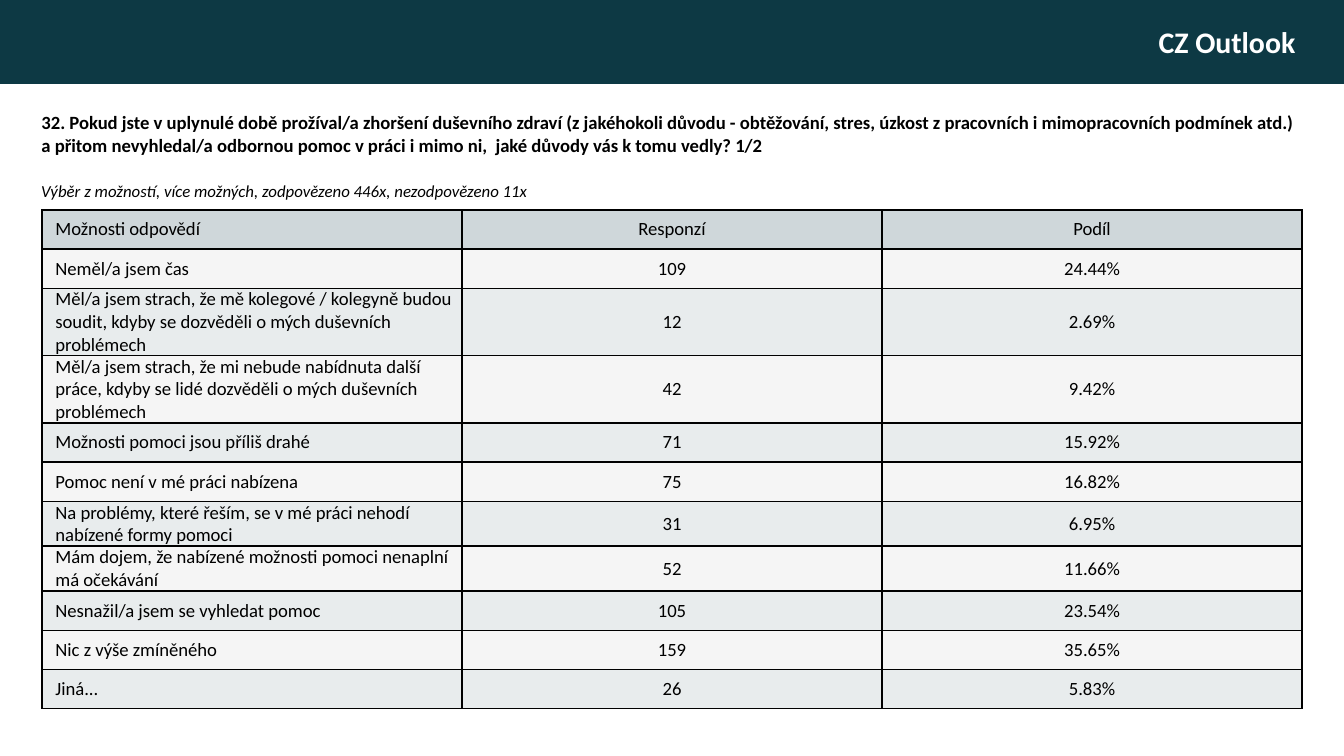
from dataclasses import dataclass

import pptx
import pptx.dml.color
import pptx.enum.shapes
import pptx.enum.text
import pptx.oxml.ns
import pptx.slide
import pptx.util
from lxml import etree

Pt = pptx.util.Pt
ALIGN = pptx.enum.text.PP_ALIGN
ANCHOR = pptx.enum.text.MSO_ANCHOR

COLORS = {
    "band": "0D3944",
    "header": "CFD7DA",
    "odd": "F5F5F5",
    "even": "E8ECED",
    "text": "000000",
    "white": "FFFFFF",
}

BRAND = "CZ Outlook"
QUESTION = (
    "32. Pokud jste v uplynulé době prožíval/a zhoršení duševního zdraví "
    "(z jakéhokoli důvodu - obtěžování, stres, úzkost z pracovních i "
    "mimopracovních podmínek atd.) a přitom nevyhledal/a odbornou pomoc v práci "
    "i mimo ni,  jaké důvody vás k tomu vedly? 1/2"
)
NOTE = "Výběr z možností, více možných, zodpovězeno 446x, nezodpovězeno 11x"
ANSWERS = [
    ("Možnosti odpovědí", "Responzí", "Podíl"),
    ("Neměl/a jsem čas", "109", "24.44%"),
    ("Měl/a jsem strach, že mě kolegové / kolegyně budou soudit, kdyby se "
     "dozvěděli o mých duševních problémech", "12", "2.69%"),
    ("Měl/a jsem strach, že mi nebude nabídnuta další práce, kdyby se lidé "
     "dozvěděli o mých duševních problémech", "42", "9.42%"),
    ("Možnosti pomoci jsou příliš drahé", "71", "15.92%"),
    ("Pomoc není v mé práci nabízena", "75", "16.82%"),
    ("Na problémy, které řeším, se v mé práci nehodí nabízené formy pomoci",
     "31", "6.95%"),
    ("Mám dojem, že nabízené možnosti pomoci nenaplní má očekávání",
     "52", "11.66%"),
    ("Nesnažil/a jsem se vyhledat pomoc", "105", "23.54%"),
    ("Nic z výše zmíněného", "159", "35.65%"),
    ("Jiná...", "26", "5.83%"),
]


def rgb(name):
    return pptx.dml.color.RGBColor.from_string(COLORS[name])


def apply(target, values):
    for name, value in values.items():
        setattr(target, name, value)


def paint(target, color):
    target.fill.solid()
    target.fill.fore_color.rgb = rgb(color)


@dataclass
class SurveyPage:
    page: pptx.slide.Slide
    font: str = "Calibri"
    border: float = 1

    def add_text(self, frame, text, size, color="text", align=ALIGN.LEFT, **font):
        para = frame.paragraphs[0]
        para.alignment = align
        span = para.add_run()
        span.text = text
        apply(span.font, {"name": self.font, "size": Pt(size), **font})
        span.font.color.rgb = rgb(color)
        return para

    def band(self, text, width, height):
        box = self.page.shapes.add_shape(
            pptx.enum.shapes.MSO_SHAPE.RECTANGLE, 0, 0, Pt(width), Pt(height))
        box.shadow.inherit = False
        paint(box, "band")
        box.line.fill.background()
        apply(box.text_frame, {"vertical_anchor": ANCHOR.MIDDLE,
                               "margin_right": Pt(26)})
        self.add_text(box.text_frame, text, 16, "white", ALIGN.RIGHT, bold=True)

    def title(self, text, left, top, width, height):
        box = self.page.shapes.title
        apply(box, {"left": Pt(left), "top": Pt(top),
                    "width": Pt(width), "height": Pt(height)})
        apply(box.text_frame, {"vertical_anchor": ANCHOR.TOP, "word_wrap": True,
                               "auto_size": pptx.enum.text.MSO_AUTO_SIZE.NONE})
        self.add_text(box.text_frame, text, 10, bold=True)

    def note(self, text, left, top, width, height):
        box = self.page.shapes.add_textbox(Pt(left), Pt(top), Pt(width), Pt(height))
        box.text_frame.word_wrap = True
        self.add_text(box.text_frame, text, 9, italic=True)

    def outline(self, cell):
        """Draw all four borders of a cell; they must precede its fill."""
        qn = pptx.oxml.ns.qn
        properties = cell._tc.get_or_add_tcPr()
        for place, side in enumerate(("a:lnL", "a:lnR", "a:lnT", "a:lnB")):
            line = etree.Element(qn(side), w=str(Pt(self.border)))
            fill = etree.SubElement(line, qn("a:solidFill"))
            etree.SubElement(fill, qn("a:srgbClr"), val=COLORS["text"])
            properties.insert(place, line)

    def table(self, rows, left, top, width, row_height):
        """Add the answers; rows with long text grow to fit it."""
        table = self.page.shapes.add_table(
            len(rows), len(rows[0]), Pt(left), Pt(top),
            Pt(width), Pt(row_height * len(rows))).table
        for index, values in enumerate(rows):
            color = "header" if index == 0 else "odd" if index % 2 else "even"
            for column, text in enumerate(values):
                cell = table.cell(index, column)
                inset = 0 if column else 3.6
                apply(cell, {"vertical_anchor": ANCHOR.MIDDLE,
                             "margin_left": Pt(inset), "margin_right": 0,
                             "margin_top": 0, "margin_bottom": 0})
                paint(cell, color)
                self.outline(cell)
                align = ALIGN.CENTER if column else ALIGN.LEFT
                para = self.add_text(cell.text_frame, text, 10, align=align)
                para._p.get_or_add_pPr().set("marL", str(Pt(inset)))


def main():
    deck = pptx.Presentation()
    apply(deck, {"slide_width": Pt(720), "slide_height": Pt(405)})
    survey = SurveyPage(deck.slides.add_slide(deck.slide_layouts[5]))
    survey.band(BRAND, 720, 45)
    survey.title(QUESTION, 15, 56, 690, 37.5)
    survey.note(NOTE, 15, 93.5, 300, 45)
    survey.table(ANSWERS, 22.5, 112.5, 675, 21)
    deck.save("out.pptx")


if __name__ == "__main__":
    main()
